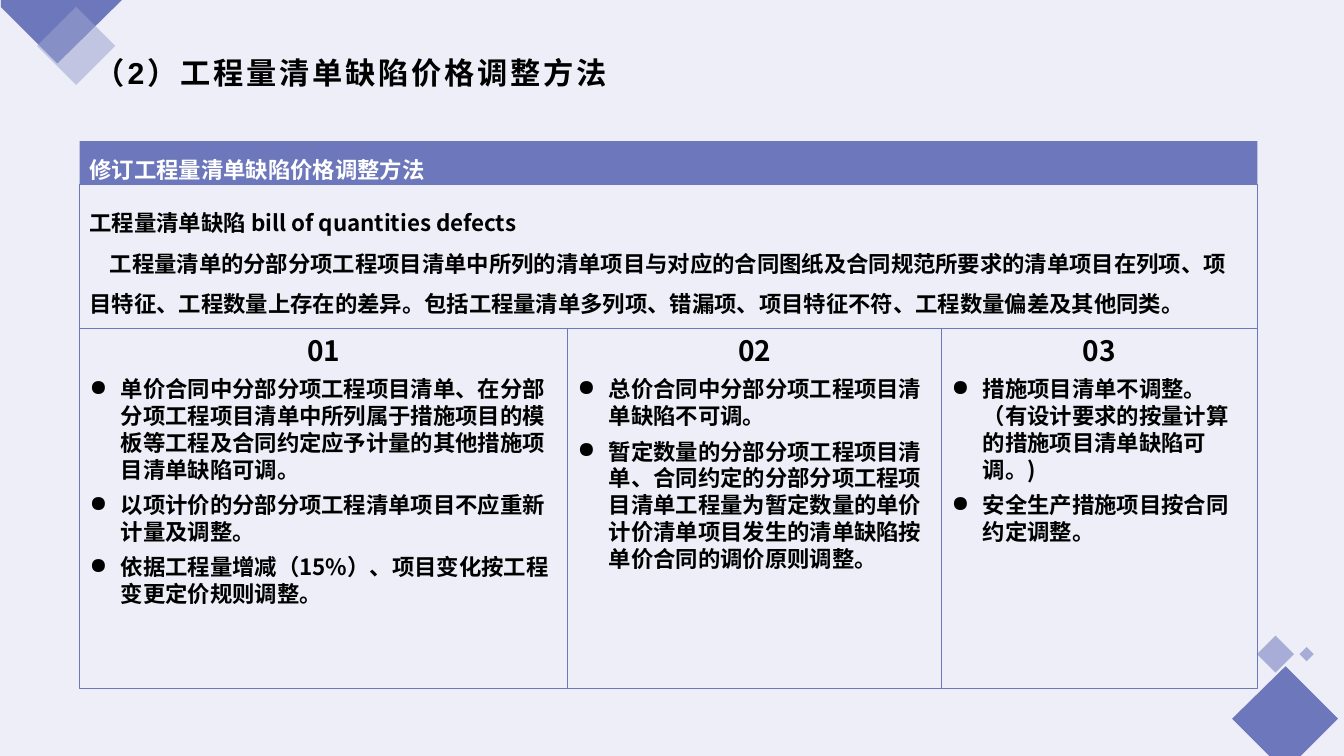
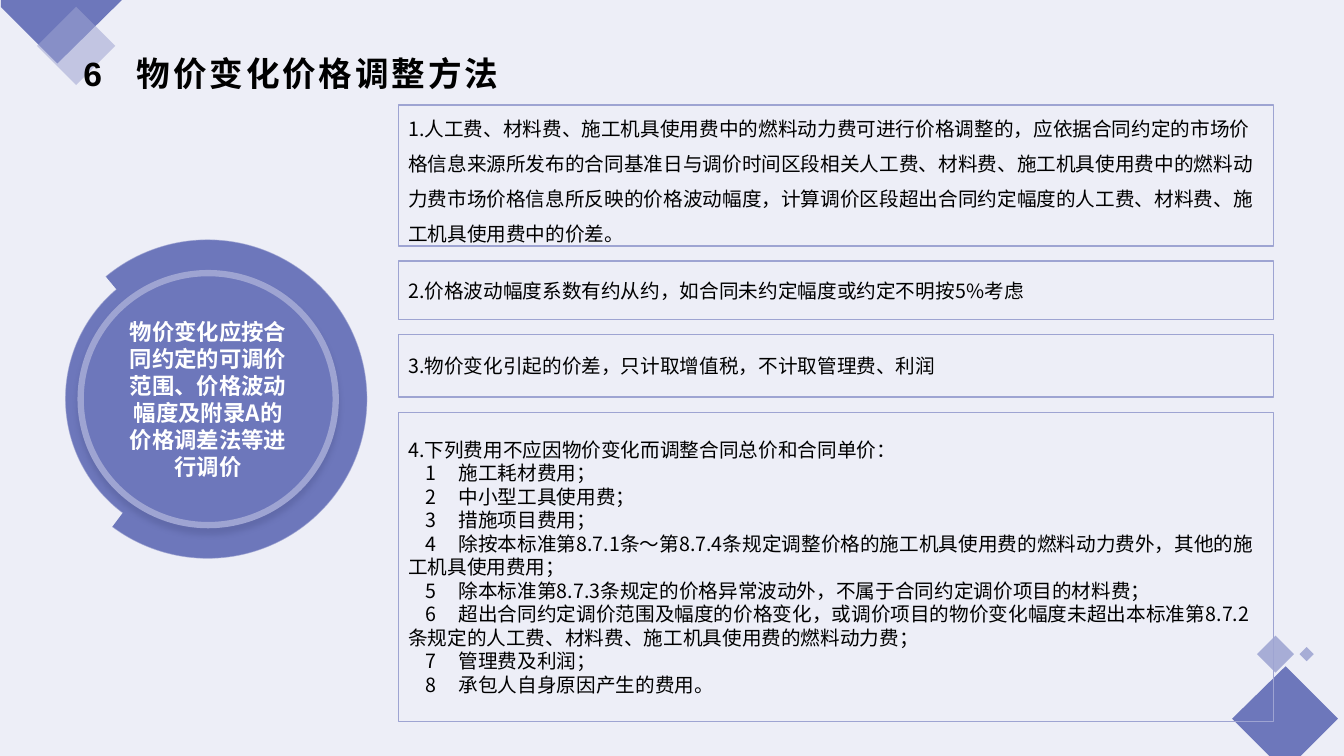
from itertools import accumulate

from lxml import etree
from pptx import Presentation
from pptx import util as u
from pptx.dml.color import RGBColor
from pptx.enum import shapes, text
from pptx.oxml.ns import qn

PX = 9144  # EMU, 100 px to the inch
SHAPE = shapes.MSO_SHAPE
ANCHOR = text.MSO_ANCHOR
CENTER = text.PP_ALIGN.CENTER


class Theme:
    background = "EDEEF7"
    main = "6D77BB"
    soft = "9EA4D2"
    shadow = "313869"
    dark = "000000"
    light = "FFFFFF"
    body_font = "Noto Sans CJK SC"
    title_font = "Arial"
    number_size, strong_size, body_size = 20, 16, 14


# Content

DEFECTS = {
    "title": "（2）工程量清单缺陷价格调整方法",
    "header": "修订工程量清单缺陷价格调整方法",
    "term": "工程量清单缺陷 bill of quantities defects",
    "definition": "工程量清单的分部分项工程项目清单中所列的清单项目与对应的合同图纸及合同规范所要求的"
                  "清单项目在列项、项目特征、工程数量上存在的差异。包括工程量清单多列项、错漏项、"
                  "项目特征不符、工程数量偏差及其他同类。",
    "columns": [
        (484, "01", [
            "单价合同中分部分项工程项目清单、在分部分项工程项目清单中所列属于措施项目的模板等工程"
            "及合同约定应予计量的其他措施项目清单缺陷可调。",
            "以项计价的分部分项工程清单项目不应重新计量及调整。",
            "依据工程量增减（15%）、项目变化按工程变更定价规则调整。",
        ]),
        (371, "02", [
            "总价合同中分部分项工程项目清单缺陷不可调。",
            "暂定数量的分部分项工程项目清单、合同约定的分部分项工程项目清单工程量为暂定数量的单价"
            "计价清单项目发生的清单缺陷按单价合同的调价原则调整。",
        ]),
        (313, "03", [
            "措施项目清单不调整。（有设计要求的按量计算的措施项目清单缺陷可调。)",
            "安全生产措施项目按合同约定调整。",
        ]),
    ],
}

PRICES = {
    "title": "6\t物价变化价格调整方法",
    "principle": "物价变化应按合同约定的可调价范围、价格波动幅度及附录A的价格调差法等进行调价",
    # height, line spacing, lead, numbered items
    "rules": [
        (140, 1.5,
         "1.人工费、材料费、施工机具使用费中的燃料动力费可进行价格调整的，应依据合同约定的市场价格"
         "信息来源所发布的合同基准日与调价时间区段相关人工费、材料费、施工机具使用费中的燃料动力费"
         "市场价格信息所反映的价格波动幅度，计算调价区段超出合同约定幅度的人工费、材料费、施工机具"
         "使用费中的价差。", []),
        (58, None, "2.价格波动幅度系数有约从约，如合同未约定幅度或约定不明按5%考虑", []),
        (62, None, "3.物价变化引起的价差，只计取增值税，不计取管理费、利润", []),
        (307, None, "4.下列费用不应因物价变化而调整合同总价和合同单价：", [
            "施工耗材费用；",
            "中小型工具使用费；",
            "措施项目费用；",
            "除按本标准第8.7.1条～第8.7.4条规定调整价格的施工机具使用费的燃料动力费外，"
            "其他的施工机具使用费用；",
            "除本标准第8.7.3条规定的价格异常波动外，不属于合同约定调价项目的材料费；",
            "超出合同约定调价范围及幅度的价格变化，或调价项目的物价变化幅度未超出本标准"
            "第8.7.2条规定的人工费、材料费、施工机具使用费的燃料动力费；",
            "管理费及利润；",
            "承包人自身原因产生的费用。",
        ]),
    ],
}

CORNERS = [
    [(1275, 661), (1327, 713), (1290, 750), (1259, 750), (1222, 713)],
    [(1, 0), (121, 0), (57, 63), (1, 7)],
]
DIAMONDS = [  # left, top, side, colour
    (1252, 636, 26, Theme.main),
    (1291, 644, 10, Theme.main),
    (48, 18, 55, Theme.soft),
]
RING_ARCS = [  # left, top, size, start and end in degrees
    (65, 254, 283, 101.07, 328.89),
    (48, 238, 316, 230.27, 126.73),
]


# Drawing

def px(*lengths):
    return [round(length * PX) for length in lengths]


def add_xml(parent, tag, **attributes):
    return etree.SubElement(parent, qn(tag), attributes)


def set_alpha(color_parent, percent):
    for color in color_parent.iter(qn("a:srgbClr")):
        add_xml(color, "a:alpha", val=str(percent * 1000))


def paint(shape, fill=None, line=None, width=0.75):
    shape.shadow.inherit = False
    if fill:
        shape.fill.solid()
        shape.fill.fore_color.rgb = RGBColor.from_string(fill)
    else:
        shape.fill.background()
    if line:
        shape.line.color.rgb = RGBColor.from_string(line)
        shape.line.width = u.Pt(width)
    else:
        shape.line.fill.background()
    return shape


def add_panel(slide, box, kind=SHAPE.RECTANGLE, anchor=ANCHOR.MIDDLE, **look):
    panel = paint(slide.shapes.add_shape(kind, *px(*box)), **look)
    panel.text_frame.word_wrap = True
    panel.text_frame.vertical_anchor = anchor
    return panel


def write(frame, words, size, color=Theme.dark, bold=False, latin=Theme.body_font, align=None,
          spacing=None, after=None, left=0, first=0, bullet=None, tab=None, tracking=None):
    """Fill the first paragraph if it is empty, otherwise add one."""
    paragraph = frame.paragraphs[0] if not frame.text else frame.add_paragraph()
    paragraph.add_run().text = words
    paragraph.alignment = align or text.PP_ALIGN.LEFT
    if spacing:
        paragraph.line_spacing = spacing
    if after:
        paragraph.space_after = u.Pt(after)
    font = paragraph.font
    font.name, font.size, font.bold = latin, u.Pt(size), bold
    font.color.rgb = RGBColor.from_string(color)

    properties = paragraph._p.get_or_add_pPr()
    properties.set("marL", str(left * PX))
    properties.set("indent", str(first * PX))
    defaults = properties.find(qn("a:defRPr"))
    defaults.find(qn("a:latin")).addnext(
        etree.Element(qn("a:ea"), typeface=Theme.body_font))
    if tracking:
        defaults.set("spc", str(tracking * 100))
    if bullet:
        defaults.addprevious(etree.Element(qn("a:buChar"), char=bullet))
    if tab:
        stops = etree.Element(qn("a:tabLst"))
        add_xml(stops, "a:tab", pos=str(tab * PX), algn="l")
        defaults.addprevious(stops)


def add_page(deck, title, size, **indents):
    """Add a slide with corner diamonds and a title."""
    slide = deck.slides.add_slide(deck.slide_layouts[6])
    for start, *others in CORNERS:
        outline = slide.shapes.build_freeform(*start, scale=PX)
        outline.add_line_segments(others)
        paint(outline.convert_to_shape(), Theme.main)
    for left, top, side, color in DIAMONDS:
        diamond = add_panel(slide, (left, top, side, side), fill=color)
        diamond.rotation = 45
        set_alpha(diamond._element.spPr, 54)
    frame = slide.shapes.add_textbox(*px(73, 48, 1187, 48)).text_frame
    frame.word_wrap = True
    frame.vertical_anchor = ANCHOR.MIDDLE
    write(frame, title, size, bold=True, latin=Theme.title_font, tracking=2, **indents)
    return slide


def build_defects(deck):
    slide = add_page(deck, DEFECTS["title"], 21.6, left=11)
    left, top = 79, 140
    widths = [width for width, _, _ in DEFECTS["columns"]]
    header_height, definition_height, column_height = 43, 143, 357
    strong = dict(size=Theme.strong_size, bold=True)

    header = add_panel(slide, (left, top, sum(widths), header_height), fill=Theme.main)
    write(header.text_frame, DEFECTS["header"], color=Theme.light, spacing=1.5, **strong)

    top += header_height
    definition = add_panel(slide, (left, top, sum(widths), definition_height), line=Theme.main)
    write(definition.text_frame, DEFECTS["term"], spacing=1.5, **strong)
    write(definition.text_frame, DEFECTS["definition"], spacing=1.5, first=20, **strong)

    top += definition_height
    lefts = accumulate(widths, initial=left)
    for column_left, (width, number, points) in zip(lefts, DEFECTS["columns"]):
        column = add_panel(slide, (column_left, top, width, column_height),
                           anchor=ANCHOR.TOP, line=Theme.main)
        write(column.text_frame, number, Theme.number_size, bold=True, align=CENTER, after=6)
        for point in points:
            write(column.text_frame, point, after=6, left=31, first=-31, bullet="●", **strong)


def add_principle(slide):
    for left, top, size, *angles in RING_ARCS:
        arc = add_panel(slide, (left, top, size, size), SHAPE.ARC,
                        fill=Theme.main, line=Theme.soft, width=0.5)
        for index, degrees in enumerate(angles):
            arc.adjustments[index] = degrees * 0.6  # 60000 per degree over 100000
        set_alpha(arc.line._ln, 64)

    disc = add_panel(slide, (80, 271, 253, 250), SHAPE.OVAL,
                     fill=Theme.main, line=Theme.soft, width=4.5)
    effects = disc._element.spPr.find(qn("a:effectLst"))
    shadow = add_xml(effects, "a:outerShdw", blurRad=str(u.Pt(4)), dist=str(u.Pt(4)),
                     dir="5400000", algn="t", rotWithShape="0")
    add_xml(shadow, "a:srgbClr", val=Theme.shadow)
    set_alpha(shadow, 20)
    write(disc.text_frame, PRICES["principle"], Theme.strong_size, Theme.light,
          bold=True, align=CENTER)


def build_prices(deck):
    slide = add_page(deck, PRICES["title"], 24, left=53, first=-53)
    add_principle(slide)
    top, gap = 104, 15
    for height, spacing, lead, items in PRICES["rules"]:
        rule = add_panel(slide, (395, top, 868, height), line=Theme.soft, width=1)
        write(rule.text_frame, lead, Theme.body_size, spacing=spacing)
        for number, item in enumerate(items, 1):
            write(rule.text_frame, f"{number}\t{item}", Theme.body_size, first=17, tab=40)
        top += height + gap


def main():
    deck = Presentation()
    deck.slide_width, deck.slide_height = px(1333, 750)
    backdrop = deck.slide_master.background.fill
    backdrop.solid()
    backdrop.fore_color.rgb = RGBColor.from_string(Theme.background)
    build_defects(deck)
    build_prices(deck)
    deck.save("out.pptx")


if __name__ == "__main__":
    main()
